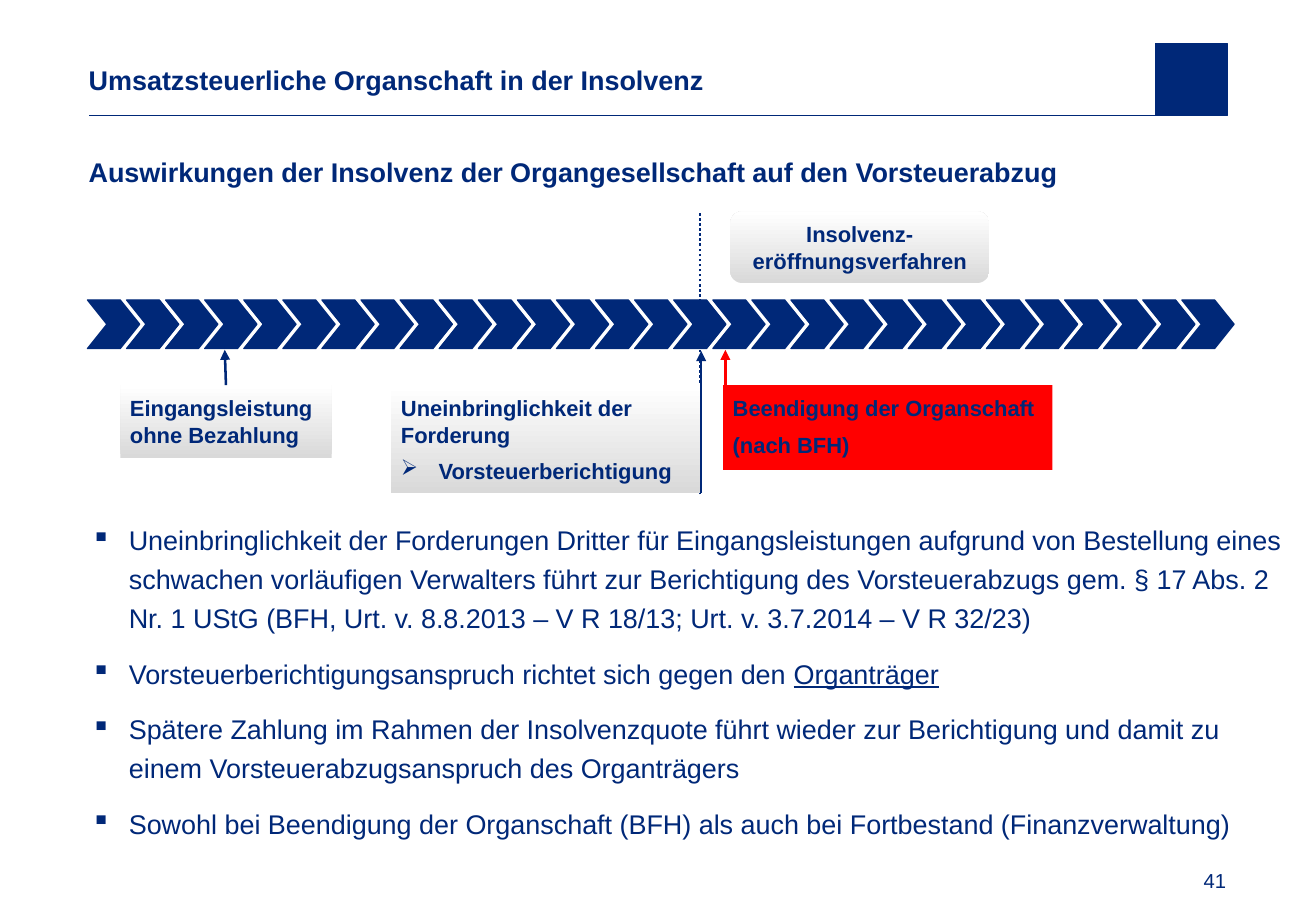
from dataclasses import dataclass
from typing import Any, NamedTuple

from lxml import etree
from pptx import Presentation
from pptx.dml.color import RGBColor
from pptx.enum.dml import MSO_LINE
from pptx.enum.shapes import MSO_CONNECTOR, MSO_SHAPE
from pptx.enum.text import MSO_ANCHOR, MSO_AUTO_SIZE, PP_ALIGN
from pptx.oxml.ns import qn
from pptx.util import Emu, Inches, Pt

RECTANGLE = MSO_SHAPE.RECTANGLE
ROUNDED = MSO_SHAPE.ROUNDED_RECTANGLE
CHEVRON = MSO_SHAPE.CHEVRON
STRAIGHT = MSO_CONNECTOR.STRAIGHT
DOTTED = MSO_LINE.ROUND_DOT
LEFT, CENTER, RIGHT = PP_ALIGN.LEFT, PP_ALIGN.CENTER, PP_ALIGN.RIGHT
TOP, MIDDLE, BOTTOM = MSO_ANCHOR.TOP, MSO_ANCHOR.MIDDLE, MSO_ANCHOR.BOTTOM
NO_AUTOFIT = MSO_AUTO_SIZE.NONE
TITLE_ONLY = 5
SLIDE_WIDTH, SLIDE_HEIGHT = Inches(10.83), Inches(7.5)
COLUMN, ROW = SLIDE_WIDTH / 100, SLIDE_HEIGHT / 100
HANGING_INDENT = Inches(0.31)


@dataclass(frozen=True)
class Theme:
    font: str = "Arial"
    navy: RGBColor = RGBColor(0x00, 0x28, 0x78)
    red: RGBColor = RGBColor(0xFF, 0x00, 0x00)
    grey: RGBColor = RGBColor(0xD9, 0xD9, 0xD9)
    white: RGBColor = RGBColor(0xFF, 0xFF, 0xFF)
    text_size: float = 16
    callout_size: float = 13
    number_size: float = 12


THEME = Theme()


class Box(NamedTuple):
    left: float
    top: float
    width: float
    height: float

    def lengths(self) -> tuple[Emu, Emu, Emu, Emu]:
        return (Emu(round(self.left * COLUMN)), Emu(round(self.top * ROW)),
                Emu(round(self.width * COLUMN)), Emu(round(self.height * ROW)))


class Run(NamedTuple):
    text: str
    underline: bool = False


class Item(NamedTuple):
    runs: tuple[Run, ...]
    bullet: str = ""


@dataclass(frozen=True)
class TextStyle:
    size: float = THEME.text_size
    bold: bool = False
    align: PP_ALIGN = LEFT
    anchor: MSO_ANCHOR = TOP
    inset: tuple[float, float] = (0, 0)
    space_before: float = 0
    line_spacing: float = 1.0
    wrap: bool = True


@dataclass(frozen=True)
class Callout:
    box: Box
    items: tuple[Item, ...]
    style: TextStyle
    kind: MSO_SHAPE = RECTANGLE
    highlighted: bool = False


@dataclass(frozen=True)
class Line:
    start: tuple[float, float]
    end: tuple[float, float]
    color: RGBColor = THEME.navy
    width: float = 1.5
    arrow: bool = True
    dotted: bool = False


HEADING = TextStyle(bold=True, anchor=MIDDLE)
SUBHEADING = TextStyle(bold=True, line_spacing=1.2)
BODY = TextStyle(space_before=10, line_spacing=1.2)
NUMBER = TextStyle(THEME.number_size, align=RIGHT, anchor=BOTTOM, wrap=False)
EVENT = TextStyle(THEME.callout_size, bold=True, inset=(0.08, 0.08), space_before=6)
PHASE = TextStyle(THEME.callout_size, bold=True, align=CENTER, anchor=MIDDLE, inset=(0.08, 0.04))


def plain(text: str, bullet: str = "") -> Item:
    return Item((Run(text),), bullet)


TITLE = plain("Umsatzsteuerliche Organschaft in der Insolvenz")
SUBTITLE = plain("Auswirkungen der Insolvenz der Organgesellschaft auf den Vorsteuerabzug")
CONCLUSIONS = (
    plain("Uneinbringlichkeit der Forderungen Dritter für Eingangsleistungen aufgrund von Bestellung eines "
          "schwachen vorläufigen Verwalters führt zur Berichtigung des Vorsteuerabzugs gem. § 17 Abs. 2 "
          "Nr. 1 UStG (BFH, Urt. v. 8.8.2013 – V R 18/13; Urt. v. 3.7.2014 – V R 32/23)", "▪"),
    Item((Run("Vorsteuerberichtigungsanspruch richtet sich gegen den "), Run("Organträger", True)), "▪"),
    plain("Spätere Zahlung im Rahmen der Insolvenzquote führt wieder zur Berichtigung und damit zu "
          "einem Vorsteuerabzugsanspruch des Organträgers", "▪"),
    plain("Sowohl bei Beendigung der Organschaft (BFH) als auch bei Fortbestand (Finanzverwaltung)", "▪"),
)
CALLOUTS = (
    Callout(Box(9.14, 42.27, 16.07, 8), (plain("Eingangsleistung ohne Bezahlung"),), EVENT),
    Callout(Box(29.73, 42.27, 23.64, 11.87),
            (plain("Uneinbringlichkeit der Forderung"), plain("Vorsteuerberichtigung", "➢")), EVENT),
    Callout(Box(54.94, 42.27, 25.02, 9.33),
            (plain("Beendigung der Organschaft"), plain("(nach BFH)")), EVENT, highlighted=True),
    Callout(Box(55.49, 23.2, 19.67, 7.87), (plain("Insolvenz-eröffnungsverfahren"),), PHASE, ROUNDED),
)
HEADER_RULE = Line((93.26, 12.67), (6.74, 12.67), width=0.5, arrow=False)
OPENING_DATE = Line((53.19, 54.27), (53.19, 23.2), arrow=False, dotted=True)
ARROWS = (
    Line((53.28, 54.13), (53.28, 38.53)),
    Line((17.17, 42.27), (17.08, 38.4)),
    Line((55.12, 46.67), (55.12, 38.4), THEME.red),
)
HEADER_BLOCK = Box(87.81, 4.8, 5.45, 7.87)
FIRST_CHEVRON = Box(6.65, 32.93, 3.97, 5.33)
CHEVRON_COUNT, CHEVRON_PITCH = 29, 2.97


def write_text(shape: Any, items: tuple[Item, ...], style: TextStyle) -> None:
    frame = shape.text_frame
    frame.auto_size = NO_AUTOFIT
    frame.word_wrap = style.wrap
    frame.vertical_anchor = style.anchor
    frame.margin_left = frame.margin_right = Inches(style.inset[0])
    frame.margin_top = frame.margin_bottom = Inches(style.inset[1])
    for index, item in enumerate(items):
        paragraph = frame.add_paragraph() if index else frame.paragraphs[0]
        if item.bullet:
            properties = paragraph._p.get_or_add_pPr()
            properties.set("marL", str(HANGING_INDENT))
            properties.set("indent", str(-HANGING_INDENT))
            etree.SubElement(properties, qn("a:buChar"), char=item.bullet)
        paragraph.alignment = style.align
        paragraph.line_spacing = style.line_spacing
        paragraph.space_before = Pt(style.space_before if index else 0)
        for part in item.runs:
            run = paragraph.add_run()
            run.text = part.text
            run.font.name = THEME.font
            run.font.size = Pt(style.size)
            run.font.bold = style.bold
            run.font.underline = part.underline
            run.font.color.rgb = THEME.navy


def add_text(slide: Any, box: Box, items: tuple[Item, ...], style: TextStyle) -> None:
    write_text(slide.shapes.add_textbox(*box.lengths()), items, style)


def add_block(slide: Any, kind: MSO_SHAPE, box: Box, line_width: float) -> Any:
    shape = slide.shapes.add_shape(kind, *box.lengths())
    shape.shadow.inherit = False
    shape.fill.solid()
    shape.fill.fore_color.rgb = THEME.navy
    shape.line.color.rgb = THEME.navy
    shape.line.width = Pt(line_width)
    return shape


def add_callout(slide: Any, callout: Callout) -> None:
    shape = slide.shapes.add_shape(callout.kind, *callout.box.lengths())
    shape.shadow.inherit = False
    shape.line.fill.background()
    if callout.highlighted:
        shape.fill.solid()
        shape.fill.fore_color.rgb = THEME.red
    else:
        shape.fill.gradient()
        shape.fill.gradient_angle = 90
        for stop, color in zip(shape.fill.gradient_stops, (THEME.grey, THEME.white)):
            stop.color.rgb = color
    write_text(shape, callout.items, callout.style)


def add_line(slide: Any, line: Line) -> None:
    ends = [Emu(round(value)) for x, y in (line.start, line.end) for value in (x * COLUMN, y * ROW)]
    connector = slide.shapes.add_connector(STRAIGHT, *ends)
    connector.line.color.rgb = line.color
    connector.line.width = Pt(line.width)
    if line.dotted:
        connector.line.dash_style = DOTTED
    if line.arrow:
        etree.SubElement(connector.line._get_or_add_ln(), qn("a:tailEnd"), type="triangle")
    etree.SubElement(connector._element.spPr, qn("a:effectLst"))


def main() -> None:
    presentation = Presentation()
    presentation.slide_width, presentation.slide_height = SLIDE_WIDTH, SLIDE_HEIGHT
    slide = presentation.slides.add_slide(presentation.slide_layouts[TITLE_ONLY])
    title = slide.shapes.title
    title.left, title.top, title.width, title.height = Box(6.74, 4.8, 77.56, 7.87).lengths()
    write_text(title, (TITLE,), HEADING)
    add_block(slide, RECTANGLE, HEADER_BLOCK, 0.5)
    add_line(slide, HEADER_RULE)
    add_text(slide, Box(88.37, 94.67, 4.8, 3.33), (plain("41"),), NUMBER)
    add_text(slide, Box(6.74, 16.4, 88.73, 5), (SUBTITLE,), SUBHEADING)
    add_text(slide, Box(6.93, 56.8, 90.77, 36.67), CONCLUSIONS, BODY)
    add_line(slide, OPENING_DATE)
    for index in range(CHEVRON_COUNT):
        box = FIRST_CHEVRON._replace(left=FIRST_CHEVRON.left + index * CHEVRON_PITCH)
        add_block(slide, CHEVRON, box, 0.75).adjustments[0] = 0.4
    for callout in CALLOUTS:
        add_callout(slide, callout)
    for arrow in ARROWS:
        add_line(slide, arrow)
    presentation.save("out.pptx")


if __name__ == "__main__":
    main()
